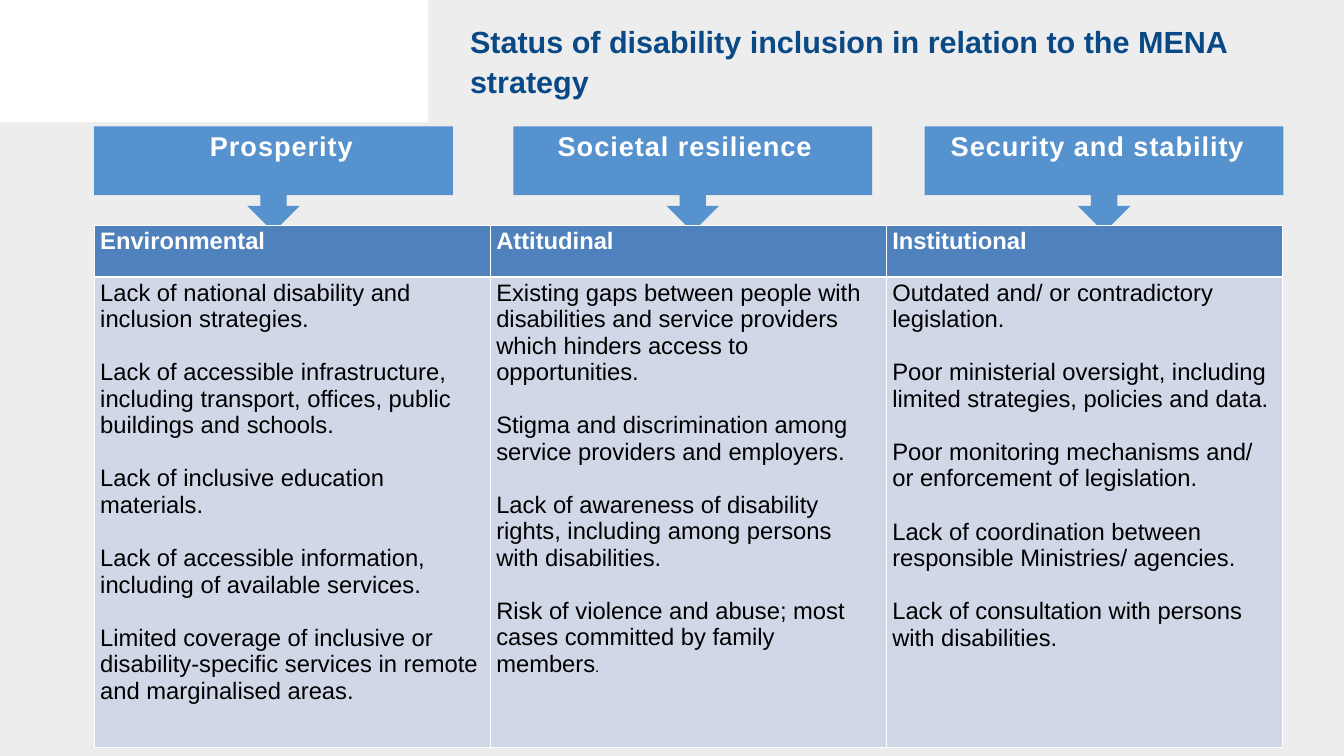
from lxml.etree import SubElement
from pptx import Presentation
from pptx.dml.color import RGBColor
from pptx.enum.shapes import MSO_SHAPE as Shape
from pptx.enum.text import MSO_ANCHOR as Anchor, MSO_AUTO_SIZE as AutoSize, PP_ALIGN as Align
from pptx.oxml.ns import qn
from pptx.util import Inches, Pt

WIDTH, HEIGHT = 21.99, 12.37
MARGIN = 1.54
COLUMN = 6.48
CALLOUT_TOP, CALLOUT_WIDTH, CALLOUT_HEIGHT = 2.07, 5.87, 1.73
TABLE_TOP, HEADER_ROW, BODY_ROW = 3.68, 0.85, 7.7
FONT = "Arial"

COLORS = {
    "background": "EDEDED",
    "white": "FFFFFF",
    "title": "094985",
    "callout": "5692CE",
    "header": "4F81BD",
    "body": "D0D8E8",
    "text": "000000",
}

PILLARS = [
    ("Prosperity", MARGIN, 1.67),
    ("Societal resilience", 8.4, 8.27),
    ("Security and stability", 15.13, 15.02),
]

BARRIERS = {
    "Environmental": [
        "Lack of national disability and inclusion strategies.",
        "Lack of accessible infrastructure, including transport, offices, public buildings and schools.",
        "Lack of inclusive education materials.",
        "Lack of accessible information, including of available services.",
        "Limited coverage of inclusive or disability-specific services in remote and marginalised areas.",
    ],
    "Attitudinal": [
        "Existing gaps between people with disabilities and service providers which hinders access to opportunities.",
        "Stigma and discrimination among service providers and employers.",
        "Lack of awareness of disability rights, including among persons with disabilities.",
        ("Risk of violence and abuse; most cases committed by family members", "."),
    ],
    "Institutional": [
        "Outdated and/ or contradictory legislation.",
        "Poor ministerial oversight, including limited strategies, policies and data.",
        "Poor monitoring mechanisms and/ or enforcement of legislation.",
        "Lack of coordination between responsible Ministries/ agencies.",
        "Lack of consultation with persons with disabilities.",
    ],
}


def color(name):
    return RGBColor.from_string(COLORS[name])


def add_run(paragraph, text, size, color_name, bold=False):
    run = paragraph.add_run()
    run.text = text
    run.font.name = FONT
    run.font.size = Pt(size)
    run.font.bold = bold
    run.font.color.rgb = color(color_name)
    return run


def paint(shape, color_name):
    shape.shadow.inherit = False
    shape.fill.solid()
    shape.fill.fore_color.rgb = color(color_name)
    shape.line.fill.background()


def add_banner(slide):
    edge, tip, bottom = 6.95, 7.47, 1.83
    builder = slide.shapes.build_freeform(0, 0, scale=Inches(1))
    builder.add_line_segments([
        (edge - 0.03, 0), (edge + 0.05, 0.06), (tip, 0.87), (tip - 0.02, 0.99),
        (edge + 0.04, bottom - 0.04), (edge - 0.02, bottom), (0, bottom),
    ])
    paint(builder.convert_to_shape(), "white")


def set_title(slide, text):
    title = slide.shapes.title
    title.left, title.top = Inches(7.59), Inches(0.28)
    title.width, title.height = Inches(13.17), Inches(1.31)
    frame = title.text_frame
    frame.word_wrap = True
    frame.auto_size = AutoSize.NONE
    frame.vertical_anchor = Anchor.TOP
    paragraph = frame.paragraphs[0]
    paragraph.alignment = Align.LEFT
    paragraph.line_spacing = 1.08
    add_run(paragraph, text, 36, "title", bold=True)


def add_callout(slide, left):
    callout = slide.shapes.add_shape(
        Shape.DOWN_ARROW_CALLOUT, Inches(left), Inches(CALLOUT_TOP),
        Inches(CALLOUT_WIDTH), Inches(CALLOUT_HEIGHT))
    paint(callout, "callout")


def add_label(slide, text, left):
    label = slide.shapes.add_textbox(
        Inches(left), Inches(CALLOUT_TOP), Inches(CALLOUT_WIDTH), Inches(0.54))
    frame = label.text_frame
    frame.word_wrap = True
    frame.margin_left = frame.margin_right = frame.margin_top = frame.margin_bottom = 0
    paragraph = frame.paragraphs[0]
    paragraph.alignment = Align.CENTER
    paragraph.line_spacing = Pt(42)
    run = add_run(paragraph, text, 32, "white", bold=True)
    run._r.get_or_add_rPr().set("spc", "110")


def style_cell(cell, fill_name, **thick_sides):
    properties = cell._tc.get_or_add_tcPr()
    for side in "LRTB":
        width = Pt(thick_sides.get(side, 1))
        line = SubElement(properties, qn(f"a:ln{side}"), w=str(width))
        fill = SubElement(line, qn("a:solidFill"))
        SubElement(fill, qn("a:srgbClr"), val=COLORS["white"])
    cell.fill.solid()
    cell.fill.fore_color.rgb = color(fill_name)


def fill_body(cell, barriers):
    frame = cell.text_frame
    for index, barrier in enumerate(barriers):
        paragraph = frame.add_paragraph() if index else frame.paragraphs[0]
        if index:
            paragraph.space_before = Pt(31.3)
        parts = (barrier,) if isinstance(barrier, str) else barrier
        for part, size in zip(parts, (28, 18)):
            add_run(paragraph, part, size, "text")


def add_barrier_table(slide):
    count = len(BARRIERS)
    table = slide.shapes.add_table(
        2, count, Inches(MARGIN), Inches(TABLE_TOP),
        Inches(COLUMN * count), Inches(HEADER_ROW + BODY_ROW)).table
    for row, height in zip(table.rows, (HEADER_ROW, BODY_ROW)):
        row.height = Inches(height)
    for index, (heading, barriers) in enumerate(BARRIERS.items()):
        table.columns[index].width = Inches(COLUMN)
        header, body = table.cell(0, index), table.cell(1, index)
        style_cell(header, "header", B=3)
        style_cell(body, "body", T=3)
        add_run(header.text_frame.paragraphs[0], heading, 28, "white", bold=True)
        fill_body(body, barriers)


def main():
    deck = Presentation()
    deck.slide_width, deck.slide_height = Inches(WIDTH), Inches(HEIGHT)
    slide = deck.slides.add_slide(deck.slide_layouts[5])
    slide.background.fill.solid()
    slide.background.fill.fore_color.rgb = color("background")
    add_banner(slide)
    set_title(slide, "Status of disability inclusion in relation to the MENA strategy")
    for name, callout_left, label_left in PILLARS:
        add_callout(slide, callout_left)
        add_label(slide, name, label_left)
    add_barrier_table(slide)
    deck.save("out.pptx")


if __name__ == "__main__":
    main()
